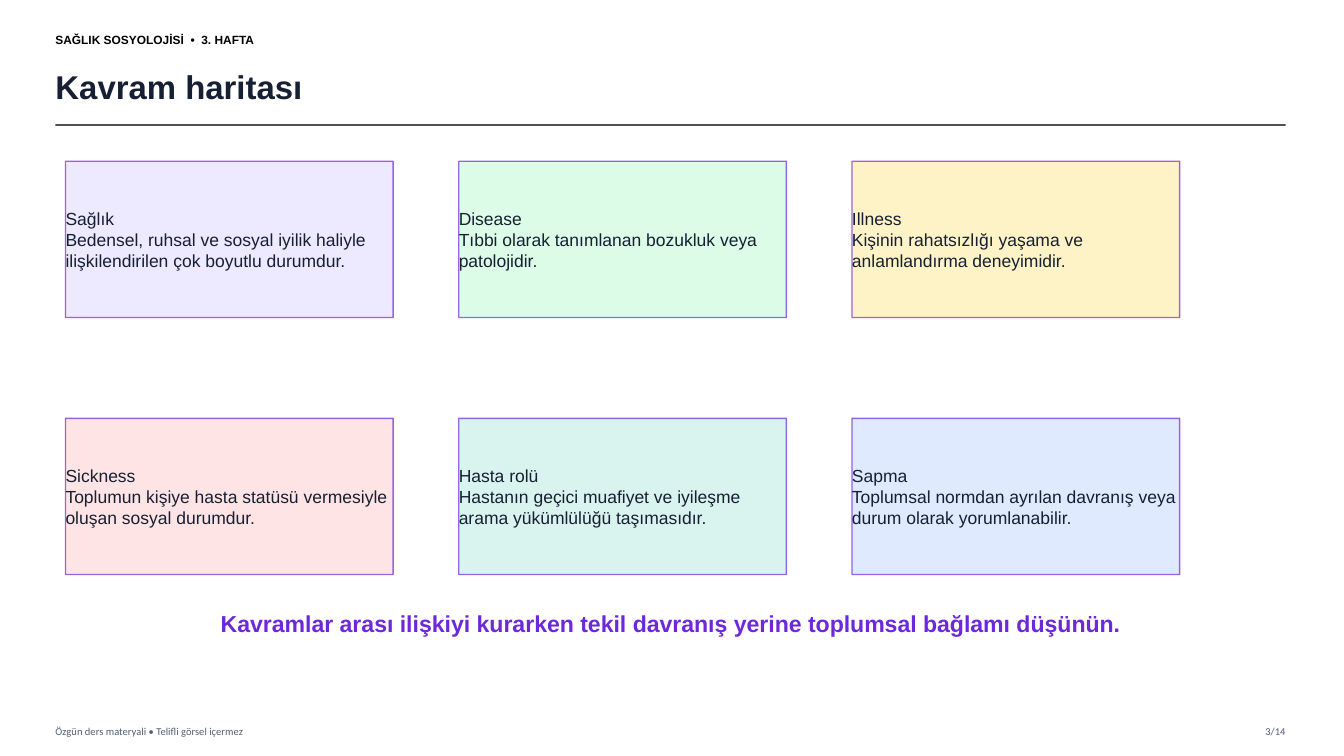
"""Build the concept map slide for week 3 of a health sociology course."""
import pptx
import pptx.dml.color
import pptx.enum.shapes
import pptx.enum.text
import pptx.oxml.ns
import pptx.util
from lxml import etree

Inches = pptx.util.Inches
RGBColor = pptx.dml.color.RGBColor
Align = pptx.enum.text.PP_ALIGN
Anchor = pptx.enum.text.MSO_ANCHOR

BLACK = RGBColor(0x00, 0x00, 0x00)
WHITE = RGBColor(0xFF, 0xFF, 0xFF)
NAVY = RGBColor(0x17, 0x20, 0x33)
CHARCOAL = RGBColor(0x33, 0x33, 0x33)
SLATE = RGBColor(0x50, 0x60, 0x70)
VIOLET = RGBColor(0x6D, 0x28, 0xD9)
LAVENDER = RGBColor(0xED, 0xE9, 0xFE)
MINT = RGBColor(0xDC, 0xFC, 0xE7)
CREAM = RGBColor(0xFE, 0xF3, 0xC7)
ROSE = RGBColor(0xFF, 0xE4, 0xE6)
AQUA = RGBColor(0xD9, 0xF3, 0xEE)
SKY = RGBColor(0xDF, 0xEA, 0xFE)


def write_text(shape, text, size, color, font="Arial", bold=False,
               align=Align.LEFT, anchor=Anchor.MIDDLE):
    frame = shape.text_frame
    frame.word_wrap = True
    frame.vertical_anchor = anchor
    frame.margin_left = frame.margin_right = 0
    frame.margin_top = frame.margin_bottom = 0
    frame.text = text
    for paragraph in frame.paragraphs:
        paragraph.alignment = align
        for run in paragraph.runs:
            run.font.name = font
            run.font.size = pptx.util.Pt(size)
            run.font.bold = bold
            run.font.color.rgb = color


def style_line(line, color, width, opacity):
    line.color.rgb = color
    line.width = pptx.util.Pt(width)
    color_element = line.fill._xPr.find(".//" + pptx.oxml.ns.qn("a:srgbClr"))
    alpha = etree.SubElement(color_element, pptx.oxml.ns.qn("a:alpha"))
    alpha.set("val", str(opacity * 1000))


presentation = pptx.Presentation()
presentation.slide_width = Inches(13.33)
presentation.slide_height = Inches(7.5)
slide = presentation.slides.add_slide(presentation.slide_layouts[6])
slide.background.fill.solid()
slide.background.fill.fore_color.rgb = WHITE

labels = [
    ((0.55, 0.25, 3.6, 0.28), "SAĞLIK SOSYOLOJİSİ  •  3. HAFTA",
     dict(size=8.5, color=BLACK, bold=True)),
    ((0.55, 0.58, 11.95, 0.55), "Kavram haritası",
     dict(size=23.5, color=NAVY, bold=True)),
    ((0.55, 7.14, 6, 0.22), "Özgün ders materyali • Telifli görsel içermez",
     dict(size=7.5, color=SLATE, font="Calibri")),
    ((12.1, 7.14, 0.65, 0.22), "3/14",
     dict(size=7.5, color=SLATE, font="Calibri", align=Align.RIGHT)),
    ((1, 6.05, 11.3, 0.45),
     "Kavramlar arası ilişkiyi kurarken tekil davranış yerine toplumsal bağlamı düşünün.",
     dict(size=16.5, color=VIOLET, bold=True, align=Align.CENTER, anchor=Anchor.TOP)),
]
for box, text, text_format in labels:
    label = slide.shapes.add_textbox(*[Inches(length) for length in box])
    write_text(label, text, **text_format)

title_rule = slide.shapes.add_connector(
    pptx.enum.shapes.MSO_CONNECTOR.STRAIGHT,
    Inches(0.55), Inches(1.24), Inches(12.75), Inches(1.24))
style_line(title_rule.line, CHARCOAL, width=1.2, opacity=85)
etree.SubElement(title_rule._element.spPr, pptx.oxml.ns.qn("a:effectLst"))

concepts = [
    ("Sağlık", LAVENDER,
     "Bedensel, ruhsal ve sosyal iyilik haliyle ilişkilendirilen çok boyutlu durumdur."),
    ("Disease", MINT, "Tıbbi olarak tanımlanan bozukluk veya patolojidir."),
    ("Illness", CREAM, "Kişinin rahatsızlığı yaşama ve anlamlandırma deneyimidir."),
    ("Sickness", ROSE, "Toplumun kişiye hasta statüsü vermesiyle oluşan sosyal durumdur."),
    ("Hasta rolü", AQUA, "Hastanın geçici muafiyet ve iyileşme arama yükümlülüğü taşımasıdır."),
    ("Sapma", SKY, "Toplumsal normdan ayrılan davranış veya durum olarak yorumlanabilir."),
]
for index, (concept, fill_color, definition) in enumerate(concepts):
    row, column = divmod(index, 3)
    card = slide.shapes.add_shape(
        pptx.enum.shapes.MSO_SHAPE.RECTANGLE,
        Inches(0.65 + 3.9 * column), Inches(1.6 + 2.55 * row),
        Inches(3.25), Inches(1.55))
    card.shadow.inherit = False
    card.fill.solid()
    card.fill.fore_color.rgb = fill_color
    style_line(card.line, VIOLET, width=1, opacity=70)
    write_text(card, f"{concept}\n{definition}", size=12.5, color=NAVY)

presentation.save("out.pptx")
